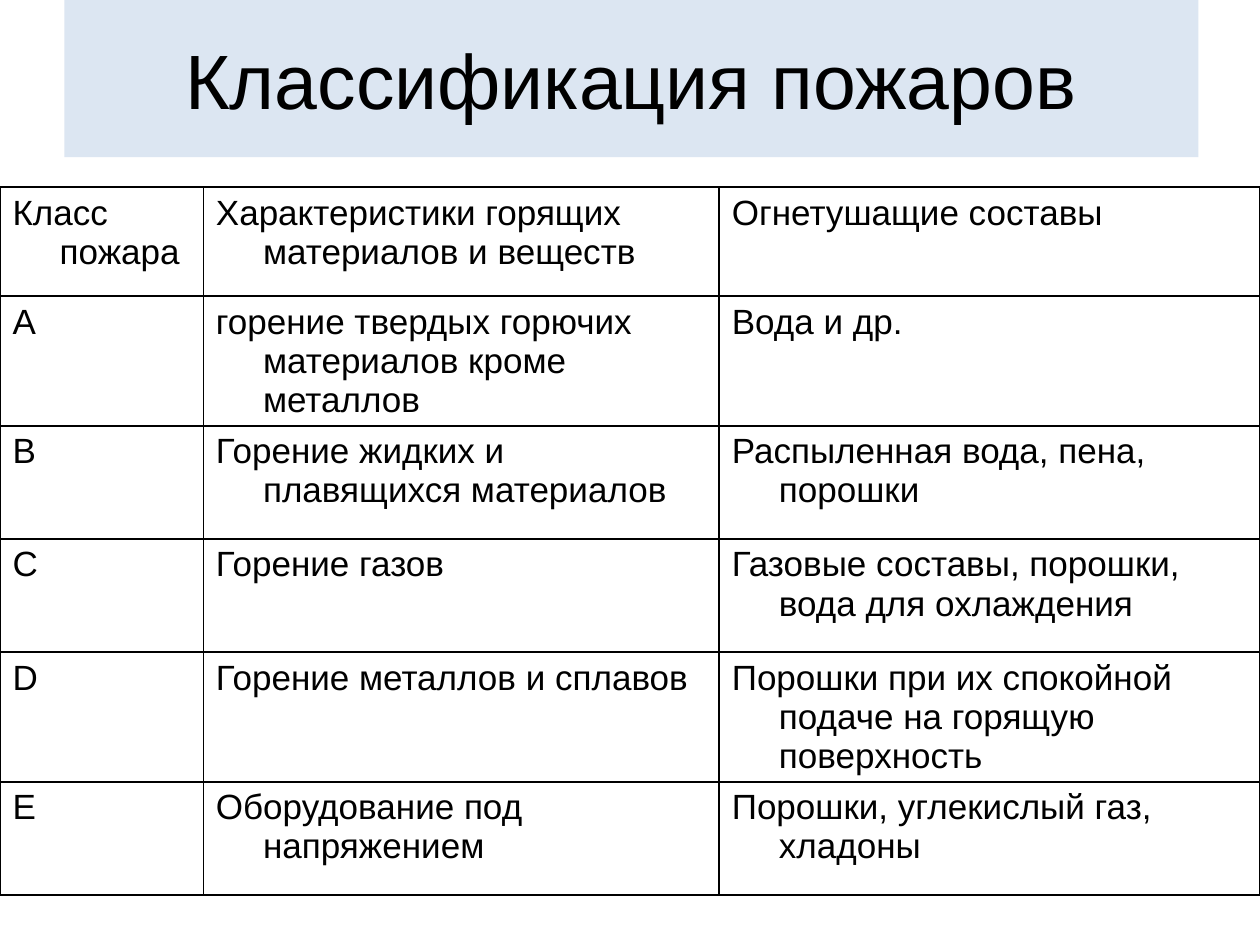
from pptx import Presentation, util as u
from pptx.dml.color import RGBColor
from pptx.enum import shapes, text
from pptx.oxml import parse_xml
from pptx.oxml.ns import nsdecls

TITLE = "Классификация пожаров"
ROWS = [
    ("Класс пожара", "Характеристики горящих материалов и веществ", "Огнетушащие составы"),
    ("А", "горение твердых горючих материалов кроме металлов", "Вода и др."),
    ("В", "Горение жидких и плавящихся материалов", "Распыленная вода, пена, порошки"),
    ("С", "Горение газов", "Газовые составы, порошки, вода для охлаждения"),
    ("D", "Горение металлов и сплавов", "Порошки при их спокойной подаче на горящую поверхность"),
    ("E", "Оборудование под напряжением", "Порошки, углекислый газ, хладоны"),
]
WIDTHS = (4.1, 10.4, 10.9)
HEAD, BODY = 2.2, 2.28
THEME = {"font": "Arial", "ink": "000000", "band": "DCE6F2",
         "title": 44, "cell": 20, "rule": 1}


def write(frame, words, size, align=text.PP_ALIGN.LEFT, hang=0):
    """Put formatted words into a text frame, with an optional hanging indent."""
    frame.word_wrap = True
    par = frame.paragraphs[0]
    par.alignment = align
    if hang:
        props = par._p.get_or_add_pPr()
        props.set("marL", str(u.Cm(hang)))
        props.set("indent", str(-u.Cm(hang)))
    run = par.add_run()
    run.text = words
    run.font.name = THEME["font"]
    run.font.size = u.Pt(size)
    run.font.color.rgb = RGBColor.from_string(THEME["ink"])


def rule(cell):
    """Draw a thin line on all four sides of a cell."""
    props = cell._tc.get_or_add_tcPr()
    for spot, side in enumerate("LRTB"):
        props.insert(spot, parse_xml(
            f'<a:ln{side} {nsdecls("a")} w="{u.Pt(THEME["rule"])}"><a:solidFill>'
            f'<a:srgbClr val="{THEME["ink"]}"/></a:solidFill></a:ln{side}>'))


def banner(slide):
    """Add the tinted title block."""
    box = slide.shapes.add_shape(shapes.MSO_SHAPE.RECTANGLE,
                                 u.Cm(1.3), 0, u.Cm(22.86), u.Cm(3.17))
    box.shadow.inherit = False
    box.fill.solid()
    box.fill.fore_color.rgb = RGBColor.from_string(THEME["band"])
    box.line.fill.background()
    box.text_frame.vertical_anchor = text.MSO_ANCHOR.MIDDLE
    write(box.text_frame, TITLE, THEME["title"], align=text.PP_ALIGN.CENTER)


def grid(slide):
    """Add the table of fire classes."""
    highs = [HEAD] + [BODY] * (len(ROWS) - 1)
    table = slide.shapes.add_table(len(ROWS), len(WIDTHS), 0, u.Cm(3.77),
                                   u.Cm(sum(WIDTHS)), u.Cm(sum(highs))).table
    table.first_row = table.horz_banding = False
    for col, wide in zip(table.columns, WIDTHS):
        col.width = u.Cm(wide)
    for row, high, words in zip(table.rows, highs, ROWS):
        row.height = u.Cm(high)
        for cell, word in zip(row.cells, words):
            cell.fill.background()
            rule(cell)
            write(cell.text_frame, word, THEME["cell"], hang=0.95)


def main():
    """Build and save the slide."""
    deck = Presentation()
    deck.slide_width, deck.slide_height = u.Cm(25.4), u.Cm(19.05)
    slide = deck.slides.add_slide(deck.slide_layouts[6])
    banner(slide)
    grid(slide)
    deck.save("out.pptx")


if __name__ == "__main__":
    main()
